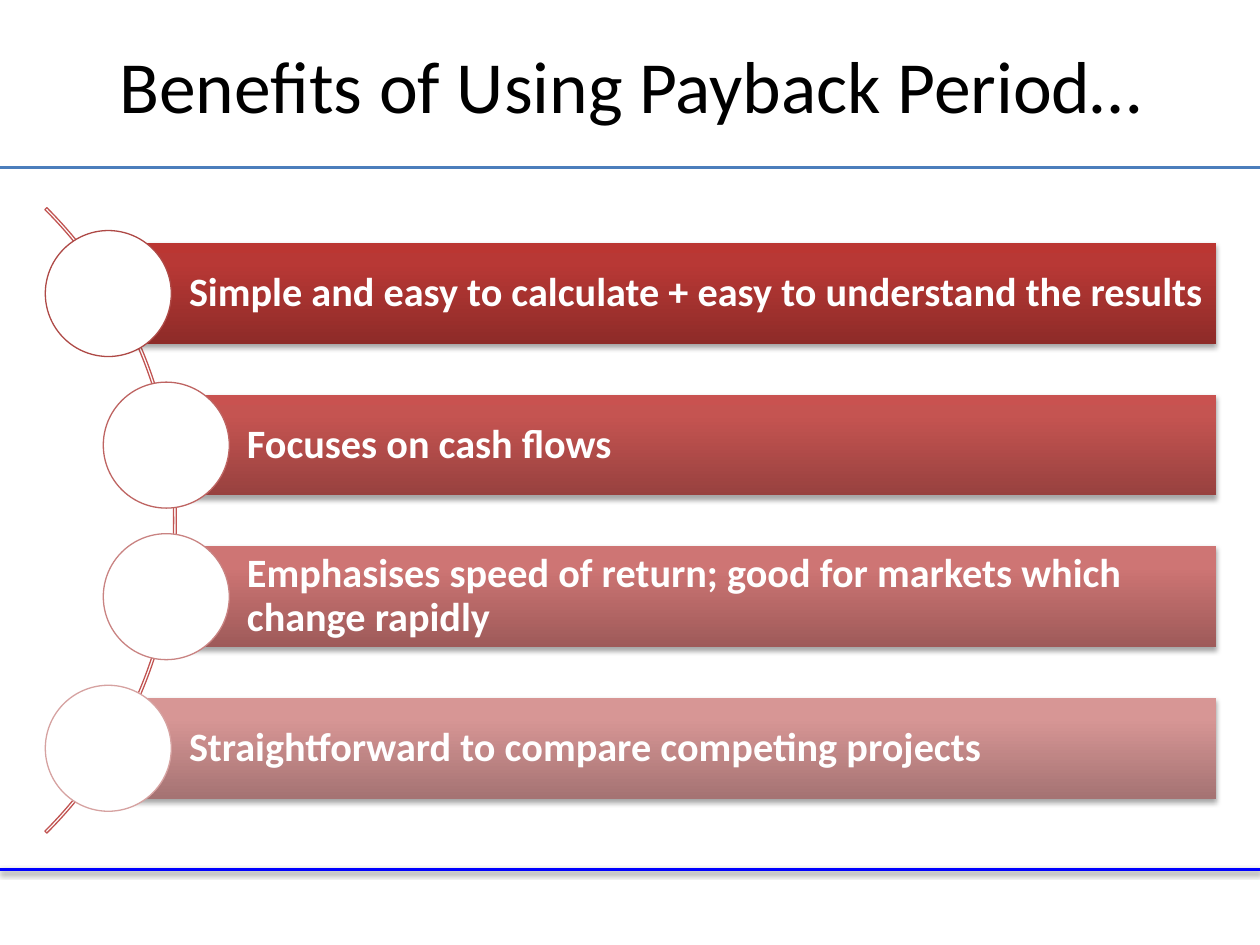
from lxml.etree import fromstring
from pptx import Presentation
from pptx.dml.color import RGBColor as RGB
from pptx.enum.shapes import MSO_CONNECTOR as Link, MSO_SHAPE as Kind
from pptx.enum.text import MSO_ANCHOR as Anchor, PP_ALIGN as Align
from pptx.util import Inches as In, Pt

# Content: text, indent step, ring colour, gradient from bottom to top
TITLE = "Benefits of Using Payback Period…"
ITEMS = [
    ("Simple and easy to calculate + easy to understand the results",
     0, "AE4946", ("8E2B28", "B83835", "BB3632")),
    ("Focuses on cash flows",
     1, "BE6462", ("98413F", "C55451", "C95250")),
    ("Emphasises speed of return; good for markets which change rapidly",
     1, "C98382", ("9E5A59", "CE7574", "D07472")),
    ("Straightforward to compare competing projects",
     0, "D6A2A1", ("A57373", "D79695", "D99594")),
]

# Theme and grid
THEME = {"font": "Calibri", "title": 42, "body": 23, "ink": "000000",
         "paper": "FFFFFF", "arc": "C15452", "rule": "4B7EBC",
         "foot": "0000FF", "thin": 0.75}
STOPS = (0, 80, 100)
WIDE, HIGH = 10, 7.5
LEFT, RIGHT, STEP = 0.86, 9.65, 0.46   # circle centre, bar end, indent
TOP, PITCH, BAR, DISC = 2.33, 1.203, 0.8, 1.0
NS = 'xmlns:a="http://schemas.openxmlformats.org/drawingml/2006/main"'

prs = Presentation()
prs.slide_width, prs.slide_height = In(WIDE), In(HIGH)
slide = prs.slides.add_slide(prs.slide_layouts[5])


def write(frame, text, size, color, bold=False, align=Align.LEFT, gap=1.0,
          inset=None):
    frame.word_wrap = True
    frame.vertical_anchor = Anchor.MIDDLE
    if inset:
        (frame.margin_left, frame.margin_top,
         frame.margin_right, frame.margin_bottom) = map(In, inset)
    par = frame.paragraphs[0]
    par.alignment, par.line_spacing = align, gap
    run = par.add_run()
    run.text = text
    font = run.font
    font.name, font.size, font.bold = THEME["font"], Pt(size), bold
    font.color.rgb = RGB.from_string(color)


def effect(blur=0, dist=0, alpha=0):
    """Effect list with a downward shadow, or an empty one."""
    glow = (f'<a:outerShdw blurRad="{Pt(blur)}" dist="{Pt(dist)}" '
            f'dir="5400000" rotWithShape="0"><a:srgbClr val="000000">'
            f'<a:alpha val="{alpha * 1000}"/></a:srgbClr></a:outerShdw>')
    return fromstring(f"<a:effectLst {NS}>{glow if alpha else ''}</a:effectLst>")


def blend(colors):
    stops = "".join(
        f'<a:gs pos="{pos * 1000}"><a:srgbClr val="{color}"/></a:gs>'
        for pos, color in zip(STOPS, colors))
    return fromstring(f'<a:gradFill {NS} rotWithShape="1"><a:gsLst>{stops}'
                      '</a:gsLst><a:lin ang="16200000" scaled="0"/></a:gradFill>')


def shape(kind, x, y, w, h, fill=None, line=None):
    new = slide.shapes.add_shape(kind, In(x), In(y), In(w), In(h))
    new.shadow.inherit = False
    new.fill.background()
    if fill:
        new.fill.solid()
        new.fill.fore_color.rgb = RGB.from_string(fill)
    new.line.fill.background()
    if line:
        new.line.color.rgb = RGB.from_string(line)
        new.line.width = Pt(THEME["thin"])
    return new


def rule(y, color, width, **glow):
    line = slide.shapes.add_connector(Link.STRAIGHT, 0, In(y), In(WIDE), In(y))
    line.line.color.rgb = RGB.from_string(color)
    line.line.width = Pt(width)
    line._element.spPr.append(effect(**glow))


def bar(x, mid, text, colors):
    new = shape(Kind.RECTANGLE, x, mid - BAR / 2, RIGHT - x, BAR)
    props = new._element.spPr
    props.replace(props.find("{*}noFill"), blend(colors))
    props.replace(props.find("{*}effectLst"), effect(3.1, 1.8, 35))
    write(new.text_frame, text, THEME["body"], THEME["paper"], bold=True,
          gap=0.9, inset=(0.64, 0.06, 0.06, 0.06))


# Title and rules
rule(6.9, THEME["foot"], 2, blur=3.1, dist=1.6, alpha=38)
rule(1.33, THEME["rule"], 1.75)
title = slide.shapes.title
title.left, title.top, title.width, title.height = map(In, (0.28, 0.08, 9.45, 1.17))
write(title.text_frame, TITLE, THEME["title"], THEME["ink"], align=Align.CENTER)

# Arc behind the list
arc = shape(Kind.BLOCK_ARC, -5.62, 0.62, 7.02, 7.02, line=THEME["arc"])
for num, value in enumerate((189, 27, 0.0031)):
    arc.adjustments[num] = value

# Bars and circles
for row, (text, step, ring, colors) in enumerate(ITEMS):
    x, mid = LEFT + step * STEP, TOP + row * PITCH
    bar(x, mid, text, colors)
    shape(Kind.OVAL, x - DISC / 2, mid - DISC / 2, DISC, DISC,
          fill=THEME["paper"], line=ring)

prs.save("out.pptx")
